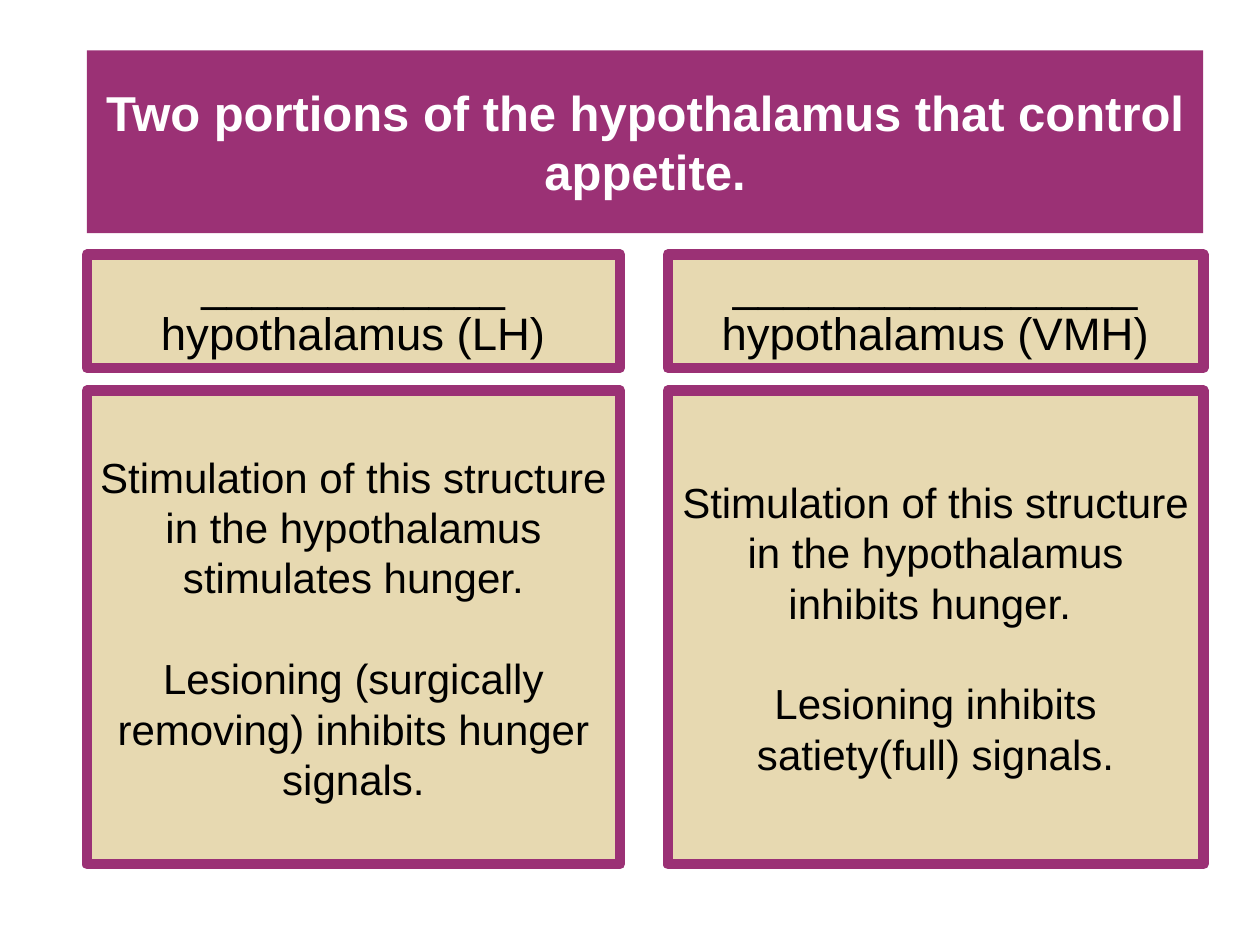
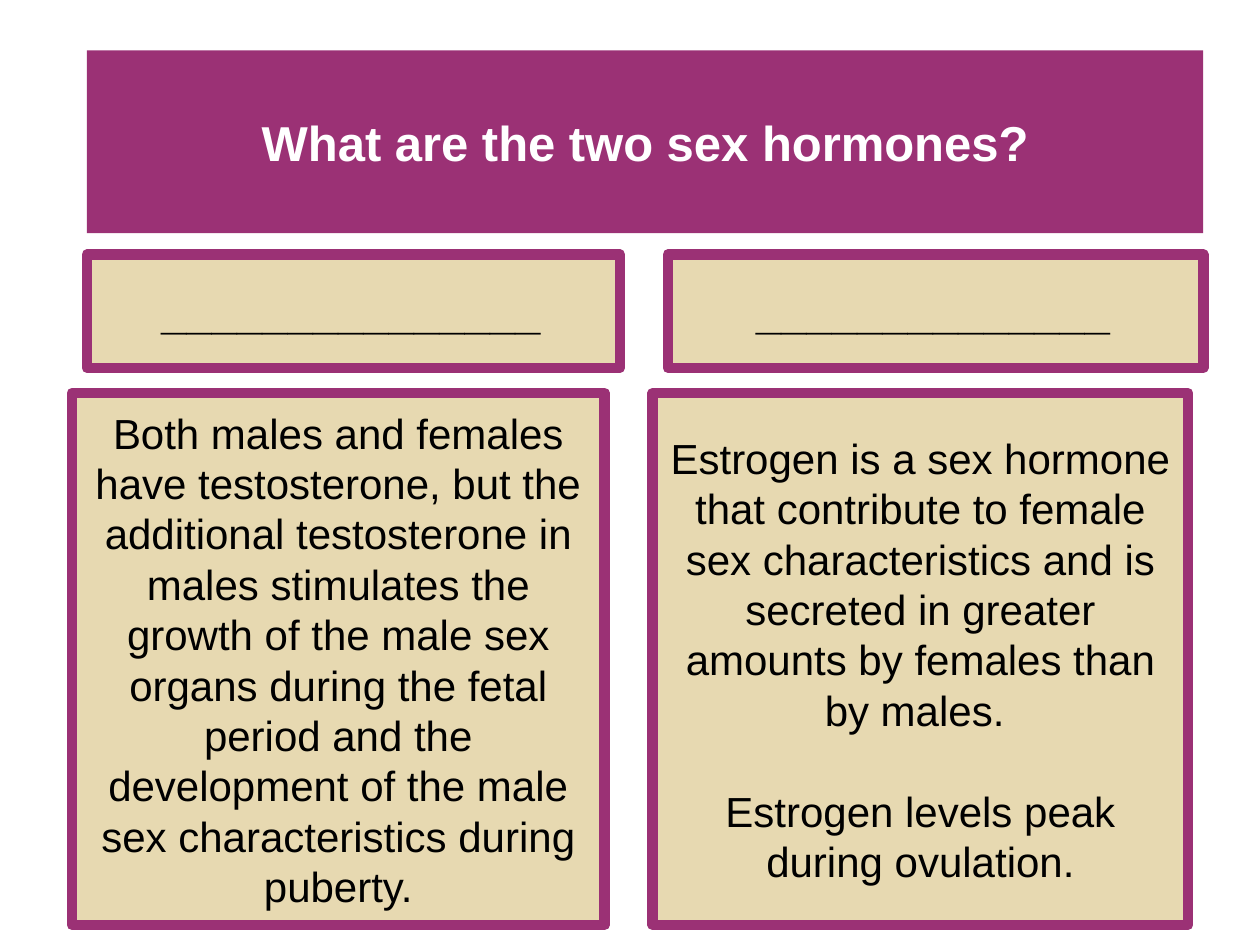
import dataclasses

import pptx
import pptx.dml.color
import pptx.enum.shapes
import pptx.enum.text
import pptx.oxml.ns
import pptx.util
from lxml import etree

Pt = pptx.util.Pt


@dataclasses.dataclass(frozen=True)
class Theme:
    plum: str = "9B3175"
    sand: str = "E7D9B1"
    white: str = "FFFFFF"
    black: str = "000000"
    font: str = "Arial"
    title_size: float = 28
    heading_size: float = 26
    detail_size: float = 24
    border: float = 6
    paragraph_gap: float = 28.8


THEME = Theme()
SLIDE_SIZE = (720, 540)
TITLE_BOX = (49.68, 28.8, 637.92, 104.4)
COLUMNS = ((49.68, 304.56), (381.6, 306))
HEADING_TOP, HEADING_HEIGHT = 145.44, 64.8

SLIDES = [
    {
        "title": "Two portions of the hypothalamus that control appetite.",
        "headings": [
            ["____________ hypothalamus (LH)"],
            ["________________", "hypothalamus (VMH)"],
        ],
        "heading_font": {},
        "heading_spacing": {"line_spacing": 0.9},
        "details": [
            ["Stimulation of this structure in the hypothalamus stimulates hunger.",
             "Lesioning (surgically removing) inhibits hunger signals."],
            ["Stimulation of this structure in the hypothalamus inhibits hunger. ",
             "Lesioning inhibits satiety(full) signals."],
        ],
        "detail_gaps": [THEME.paragraph_gap, THEME.paragraph_gap],
        "detail_shift": 0,
        "detail_top": 223.2,
        "detail_height": 270.72,
    },
    {
        "title": "What are the two sex hormones?",
        "headings": [["_______________"], ["______________"]],
        "heading_font": {"bold": True, "italic": True},
        "heading_spacing": {},
        "details": [
            ["Both males and females have testosterone, but the additional "
             "testosterone in males stimulates the growth of the male sex organs "
             "during the fetal period and the development of the male",
             "sex characteristics during puberty."],
            ["Estrogen is a sex hormone that contribute to female sex "
             "characteristics and is secreted in greater amounts by females than "
             "by males. ",
             "Estrogen levels peak during ovulation."],
        ],
        "detail_gaps": [0, THEME.paragraph_gap],
        "detail_shift": -8.64,
        "detail_top": 224.64,
        "detail_height": 303.84,
    },
]


def apply_format(target, values):
    for name, value in values.items():
        setattr(target, name, value)


def rgb(value):
    return pptx.dml.color.RGBColor.from_string(value)


def add_panel(slide, box, fill, border=None):
    shape = slide.shapes.add_shape(
        pptx.enum.shapes.MSO_SHAPE.RECTANGLE, *(Pt(length) for length in box))
    shape.shadow.inherit = False
    shape.fill.solid()
    shape.fill.fore_color.rgb = rgb(fill)
    if border:
        shape.line.color.rgb = rgb(border)
        shape.line.width = Pt(THEME.border)
        etree.SubElement(shape.line._get_or_add_ln(), pptx.oxml.ns.qn("a:round"))
    else:
        shape.line.fill.background()
    return shape


def write_text(shape, texts, size, color, font=None, spacing=None, gap=0):
    frame = shape.text_frame
    apply_format(frame, {
        "word_wrap": True,
        "vertical_anchor": pptx.enum.text.MSO_ANCHOR.MIDDLE,
        "margin_left": Pt(7.2), "margin_right": Pt(7.2),
        "margin_top": Pt(3.6), "margin_bottom": Pt(3.6),
    })
    for index, text in enumerate(texts):
        paragraph = frame.add_paragraph() if index else frame.paragraphs[0]
        apply_format(paragraph, {
            "alignment": pptx.enum.text.PP_ALIGN.CENTER,
            "space_before": Pt(gap if index else 0),
            **(spacing or {}),
        })
        run = paragraph.add_run()
        run.text = text
        apply_format(run.font, {
            "name": THEME.font, "size": Pt(size), **(font or {})})
        run.font.color.rgb = rgb(color)


def add_title(slide, box, text):
    shape = add_panel(slide, box, THEME.plum)
    write_text(shape, [text], THEME.title_size, THEME.white, {"bold": True})


def add_heading(slide, box, texts, font, spacing):
    shape = add_panel(slide, box, THEME.sand, THEME.plum)
    write_text(shape, texts, THEME.heading_size, THEME.black, font, spacing)


def add_detail(slide, box, texts, gap):
    shape = add_panel(slide, box, THEME.sand, THEME.plum)
    write_text(shape, texts, THEME.detail_size, THEME.black, gap=gap)


def add_comparison_slide(presentation, content):
    slide = presentation.slides.add_slide(presentation.slide_layouts[6])
    slide.background.fill.solid()
    slide.background.fill.fore_color.rgb = rgb(THEME.white)
    add_title(slide, TITLE_BOX, content["title"])
    columns = zip(COLUMNS, content["headings"], content["details"],
                  content["detail_gaps"])
    for (left, width), heading, detail, gap in columns:
        add_heading(slide, (left, HEADING_TOP, width, HEADING_HEIGHT), heading,
                    content["heading_font"], content["heading_spacing"])
        detail_box = (left + content["detail_shift"], content["detail_top"],
                      width, content["detail_height"])
        add_detail(slide, detail_box, detail, gap)


def main():
    presentation = pptx.Presentation()
    width, height = SLIDE_SIZE
    apply_format(presentation, {
        "slide_width": Pt(width), "slide_height": Pt(height)})
    for content in SLIDES:
        add_comparison_slide(presentation, content)
    presentation.save("out.pptx")


if __name__ == "__main__":
    main()
